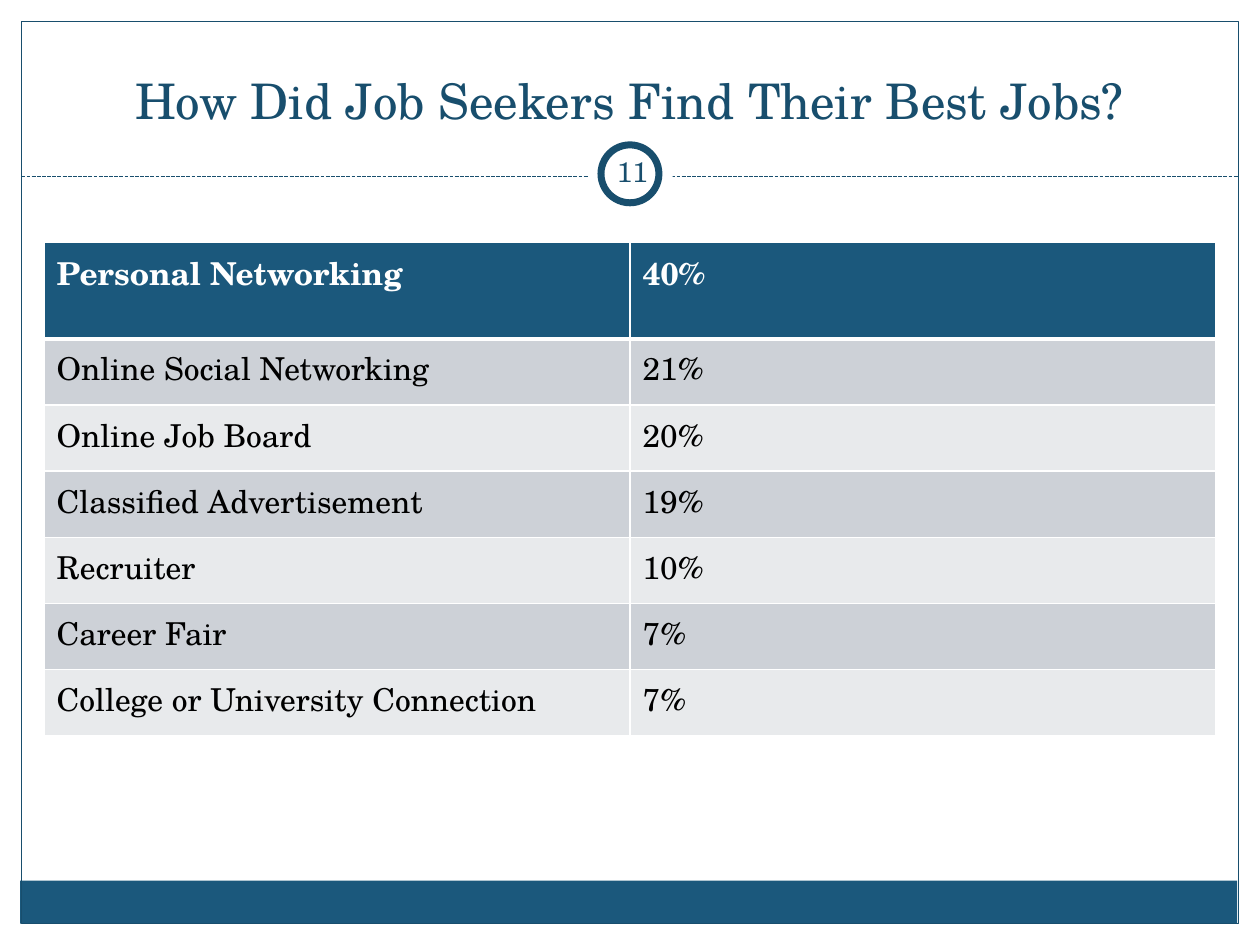
from typing import NamedTuple

from lxml import etree
from pptx import Presentation
from pptx.dml.color import RGBColor
from pptx.enum.dml import MSO_LINE_DASH_STYLE as Dash
from pptx.enum.shapes import MSO_CONNECTOR, MSO_SHAPE
from pptx.enum.text import MSO_ANCHOR as Anchor, PP_ALIGN as Align
from pptx.oxml.ns import qn
from pptx.util import Inches, Pt

FONT = "TeX Gyre Schola"
NAVY, BLUE, WHITE, BLACK = "184E6D", "1B587C", "FFFFFF", "000000"
BANDS = ("CDD1D7", "E8EAEC")


class Box(NamedTuple):
    left: float
    top: float
    width: float
    height: float

    def lengths(self) -> list:
        return [Inches(value) for value in self]


class Panel(NamedTuple):
    kind: MSO_SHAPE
    box: Box
    fill: str | None = None
    line: str | None = None
    weight: float = 0.75


class Source(NamedTuple):
    name: str
    share: str


FRAME_PANELS = [
    Panel(MSO_SHAPE.RECTANGLE, Box(0.16, 6.99, 9.66, 0.34), fill=BLUE),
    Panel(MSO_SHAPE.RECTANGLE, Box(0.17, 0.17, 9.66, 7.16), line=NAVY),
]
BADGE_PANELS = [
    Panel(MSO_SHAPE.OVAL, Box(4.67, 1.05, 0.67, 0.67), fill=WHITE),
    Panel(MSO_SHAPE.OVAL, Box(4.77, 1.15, 0.46, 0.46), WHITE, NAVY, 4),
]
JOB_SOURCES = [
    Source("Personal Networking", "40%"),
    Source("Online Social Networking", "21%"),
    Source("Online Job Board", "20%"),
    Source("Classified Advertisement", "19%"),
    Source("Recruiter", "10%"),
    Source("Career Fair", "7%"),
    Source("College or University Connection", "7%"),
]


def color(value: str) -> RGBColor:
    return RGBColor.from_string(value)


def style_text(frame, size: float, ink: str, bold: bool = False) -> None:
    for run in frame.paragraphs[0].runs:
        run.font.name, run.font.size, run.font.bold = FONT, Pt(size), bold
        run.font.color.rgb = color(ink)


def draw_panel(slide, panel: Panel) -> None:
    shape = slide.shapes.add_shape(panel.kind, *panel.box.lengths())
    shape.shadow.inherit = False
    if panel.fill:
        shape.fill.solid()
        shape.fill.fore_color.rgb = color(panel.fill)
    else:
        shape.fill.background()
    if panel.line:
        shape.line.color.rgb = color(panel.line)
        shape.line.width = Pt(panel.weight)
    else:
        shape.line.fill.background()


def draw_divider(slide, left: float, right: float, y: float) -> None:
    divider = slide.shapes.add_connector(
        MSO_CONNECTOR.STRAIGHT, Inches(left), Inches(y), Inches(right), Inches(y))
    divider.line.color.rgb = color(NAVY)
    divider.line.width = Pt(0.75)
    divider.line.dash_style = Dash.SQUARE_DOT
    etree.SubElement(divider._element.spPr, qn("a:effectLst"))


def draw_text(slide, box: Box, text: str, size: float, anchor: Anchor,
              inset: tuple[float, float]) -> None:
    frame = slide.shapes.add_textbox(*box.lengths()).text_frame
    frame.word_wrap = True
    frame.vertical_anchor = anchor
    frame.margin_left = frame.margin_right = Inches(inset[0])
    frame.margin_top = frame.margin_bottom = Inches(inset[1])
    frame.text = text
    frame.paragraphs[0].alignment = Align.CENTER
    style_text(frame, size, NAVY)


def set_borders(cell, top: float, bottom: float) -> None:
    properties = cell._tc.get_or_add_tcPr()
    weights = {"a:lnL": 1, "a:lnR": 1, "a:lnT": top, "a:lnB": bottom}
    for index, (tag, weight) in enumerate(weights.items()):
        border = etree.Element(qn(tag), w=str(Pt(weight)))
        fill = etree.SubElement(border, qn("a:solidFill"))
        etree.SubElement(fill, qn("a:srgbClr"), val=WHITE)
        properties.insert(index, border)


def draw_table(slide, box: Box, sources: list[Source], header_height: float) -> None:
    columns = len(Source._fields)
    table = slide.shapes.add_table(len(sources), columns, *box.lengths()).table
    row_height = (box.height - header_height) / (len(sources) - 1)
    for column in table.columns:
        column.width = Inches(box.width / columns)
    for index, source in enumerate(sources):
        header = index == 0
        table.rows[index].height = Inches(header_height if header else row_height)
        for cell, text in zip(table.rows[index].cells, source):
            cell.text = text
            style_text(cell.text_frame, 18, WHITE if header else BLACK, header)
            cell.fill.solid()
            cell.fill.fore_color.rgb = color(BLUE if header else BANDS[(index - 1) % 2])
            set_borders(cell, top=3 if index == 1 else 1, bottom=3 if header else 1)


def main() -> None:
    deck = Presentation()
    deck.slide_width, deck.slide_height = Inches(10), Inches(7.5)
    slide = deck.slides.add_slide(deck.slide_layouts[6])

    # Page frame, dashed divider and number badge
    for panel in FRAME_PANELS:
        draw_panel(slide, panel)
    draw_divider(slide, 0.17, 9.83, 1.4)
    for panel in BADGE_PANELS:
        draw_panel(slide, panel)

    # Title and page number
    draw_text(slide, Box(0.33, 0.25, 9.33, 0.83),
              "How Did Job Seekers Find Their Best Jobs?", 28, Anchor.BOTTOM, (0.1, 0.05))
    draw_text(slide, Box(4.77, 1.12, 0.5, 0.48), "11", 16, Anchor.MIDDLE, (0.05, 0.05))

    # Share of job seekers by source
    draw_table(slide, Box(0.35, 1.92, 9.3, 3.92), JOB_SOURCES, header_height=0.77)

    deck.save("out.pptx")


if __name__ == "__main__":
    main()
